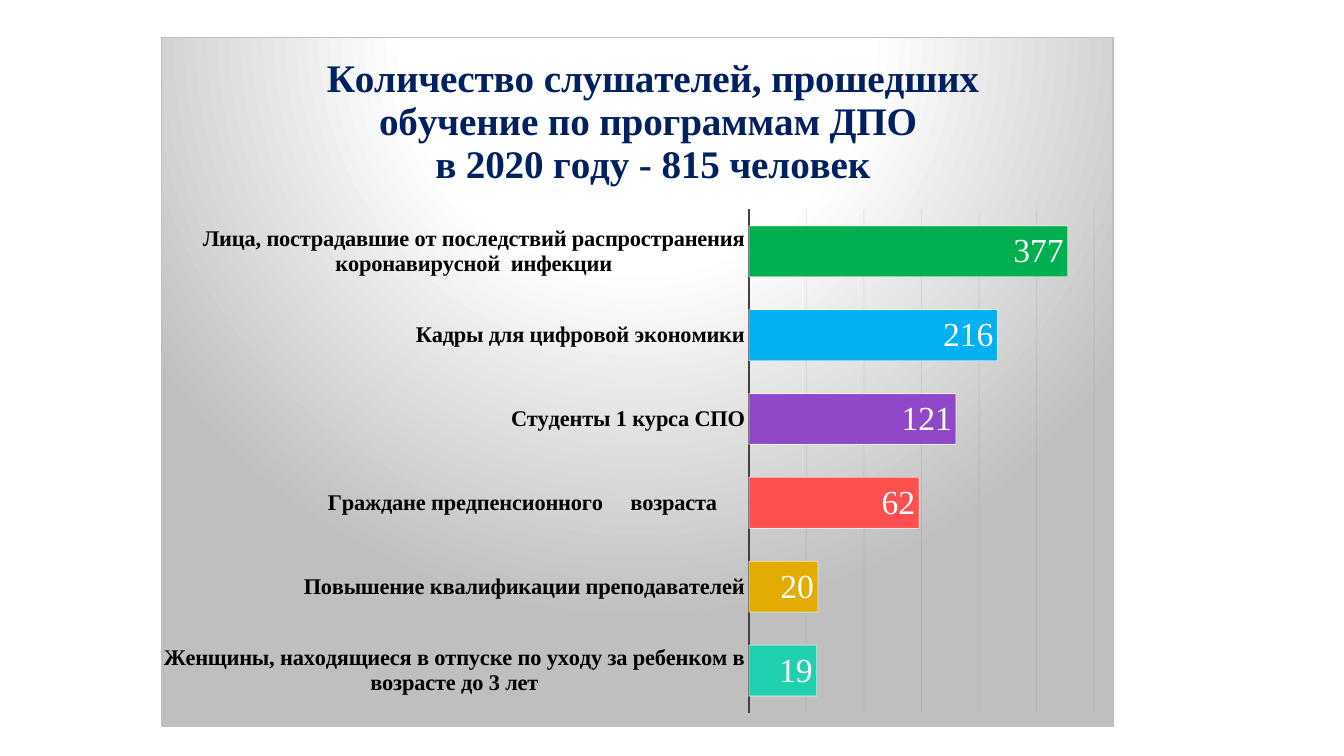
"""Build a slide with a bar chart of further-education students in 2020."""
from lxml.etree import SubElement
from pptx import Presentation
from pptx.chart.data import CategoryChartData
from pptx.dml.color import RGBColor
from pptx.enum.chart import XL_CHART_TYPE as ChartType
from pptx.enum.chart import XL_LABEL_POSITION as LabelPosition
from pptx.enum.chart import XL_TICK_MARK as TickMark
from pptx.oxml import parse_xml
from pptx.oxml.ns import nsdecls, qn
from pptx.util import Pt

BLACK = RGBColor(0x00, 0x00, 0x00)
WHITE = RGBColor(0xFF, 0xFF, 0xFF)
SILVER = RGBColor(0xBF, 0xBF, 0xBF)
NAVY = RGBColor(0x00, 0x20, 0x60)
AXIS_GRAY = RGBColor(0x40, 0x40, 0x40)
GRID_GRAY = RGBColor(0x0D, 0x0D, 0x0D)
TEAL = RGBColor(0x20, 0xD0, 0xAE)
GOLD = RGBColor(0xE2, 0xAC, 0x00)
CORAL = RGBColor(0xFF, 0x50, 0x50)
PURPLE = RGBColor(0x91, 0x48, 0xC8)
SKY = RGBColor(0x00, 0xB0, 0xF0)
GREEN = RGBColor(0x00, 0xB0, 0x50)
SERIF = "Times New Roman"
CHART_WIDTH, CHART_HEIGHT = Pt(680.4), Pt(493.2)

TITLE_LINES = [
    "Количество слушателей, прошедших",
    "обучение по программам ДПО ",
    "в 2020 году - 815 человек",
]
GROUPS = [
    ("Женщины, находящиеся в отпуске по уходу за ребенком в возрасте до 3 лет", 0.59, "19", TEAL),
    ("Повышение квалификации преподавателей", 0.6, "20", GOLD),
    ("Граждане предпенсионного     возраста     ", 1.48, "62", CORAL),
    ("Студенты 1 курса СПО", 1.8, "121", PURPLE),
    ("Кадры для цифровой экономики", 2.16, "216", SKY),
    ("Лица, пострадавшие от последствий распространения коронавирусной  инфекции", 2.77, "377", GREEN),
]


def style_line(line, color, width, opacity):
    line.color.rgb = color
    line.width = Pt(width)
    rgb = line.fill._xPr.find(".//" + qn("a:srgbClr"))
    SubElement(rgb, qn("a:alpha")).set("val", str(opacity * 1000))


def place(part, index, x, y, w=None, h=None):
    for old_layout in part.findall(qn("c:layout")):
        part.remove(old_layout)
    layout = parse_xml(f'<c:layout {nsdecls("c")}/>')
    manual = SubElement(layout, qn("c:manualLayout"))
    if w:
        SubElement(manual, qn("c:layoutTarget")).set("val", "inner")
    for mode in ("c:xMode", "c:yMode"):
        SubElement(manual, qn(mode)).set("val", "edge")
    for tag, length, whole in (("c:x", x, CHART_WIDTH), ("c:y", y, CHART_HEIGHT),
                               ("c:w", w, CHART_WIDTH), ("c:h", h, CHART_HEIGHT)):
        if length:
            SubElement(manual, qn(tag)).set("val", str(length / whole))
    part.insert(index, layout)


prs = Presentation()
prs.slide_width, prs.slide_height = Pt(960), Pt(540)
slide = prs.slides.add_slide(prs.slide_layouts[6])

students = CategoryChartData()
students.categories = [group for group, *_ in GROUPS]
students.add_series("Series 1", [length for _, length, *_ in GROUPS])
chart = slide.shapes.add_chart(
    ChartType.BAR_CLUSTERED, Pt(115), Pt(26.4), CHART_WIDTH, CHART_HEIGHT, students).chart
chart.has_legend = False
chart.font.name = "Calibri"
chart.font.size = Pt(10)
chart.font.color.rgb = BLACK

background = parse_xml(f'<c:spPr {nsdecls("c", "a")}/>')
gradient = SubElement(background, qn("a:gradFill"))
stops = SubElement(gradient, qn("a:gsLst"))
for percent, color in ((0, WHITE), (39, WHITE), (100, SILVER)):
    stop = SubElement(stops, qn("a:gs"), pos=str(percent * 1000))
    SubElement(stop, qn("a:srgbClr"), val=str(color))
glow = SubElement(gradient, qn("a:path"))
glow.set("path", "circle")
SubElement(glow, qn("a:fillToRect"), l="50000", t="-80000", r="50000", b="180000")
border = SubElement(background, qn("a:ln"), w=str(Pt(0.75)))
SubElement(SubElement(border, qn("a:solidFill")), qn("a:srgbClr"), val=str(SILVER))
chart.element.find(qn("c:chart")).addnext(background)

heading = chart.chart_title.text_frame
for number, words in enumerate(TITLE_LINES):
    paragraph = heading.add_paragraph() if number else heading.paragraphs[0]
    run = paragraph.add_run()
    run.text = words
    run.font.name = SERIF
    run.font.size = Pt(28)
    run.font.bold = True
    run.font.color.rgb = NAVY
place(chart.chart_title._element, 1, Pt(116), Pt(11))
place(chart.element.find(".//" + qn("c:plotArea")), 0, Pt(420), Pt(123), Pt(247), Pt(360))

groups_axis = chart.category_axis
groups_axis.major_tick_mark = TickMark.NONE
groups_axis.format.line.color.rgb = AXIS_GRAY
groups_axis.format.line.width = Pt(1.5)
groups_axis.tick_labels.font.name = SERIF
groups_axis.tick_labels.font.size = Pt(16)
groups_axis.tick_labels.font.bold = True
groups_axis.tick_labels.font.color.rgb = BLACK

length_axis = chart.value_axis
length_axis.minimum_scale = 0
length_axis.maximum_scale = 3
length_axis.major_unit = 0.5
length_axis.visible = False
style_line(length_axis.major_gridlines.format.line, GRID_GRAY, 0.75, 5)

plot = chart.plots[0]
plot.gap_width = 65
plot.vary_by_categories = False
bars = plot.series[0]
for index, (_, _, count, color) in enumerate(GROUPS):
    bar = bars.points[index]
    bar.format.fill.solid()
    bar.format.fill.fore_color.rgb = color
    style_line(bar.format.line, WHITE, 0.75, 50)
    run = bar.data_label.text_frame.paragraphs[0].add_run()
    run.text = count
    run.font.name = SERIF
    run.font.size = Pt(24)
    run.font.color.rgb = WHITE
    bar.data_label.position = LabelPosition.INSIDE_END

counts = bars.data_labels
counts.show_value = True
counts.position = LabelPosition.INSIDE_END
counts.font.name = SERIF
counts.font.size = Pt(24)
counts.font.bold = True
counts.font.color.rgb = WHITE

prs.save("out.pptx")
